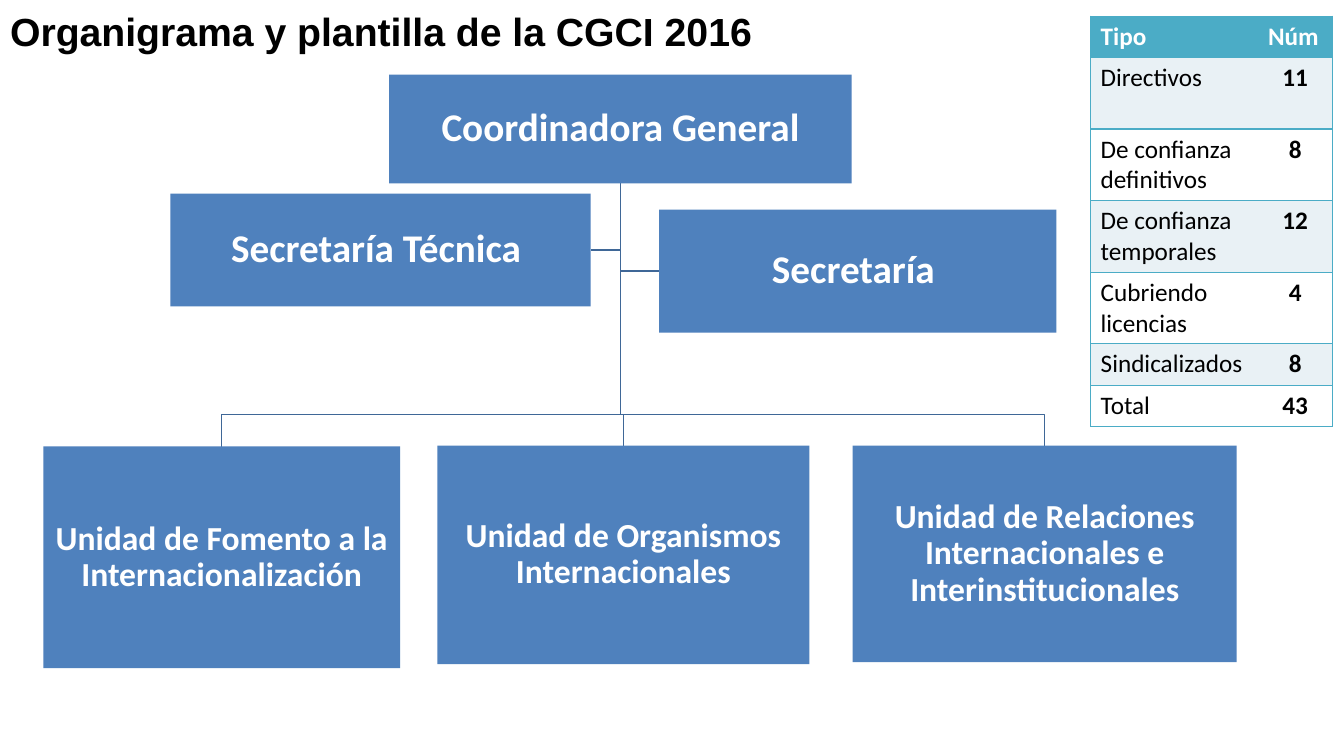
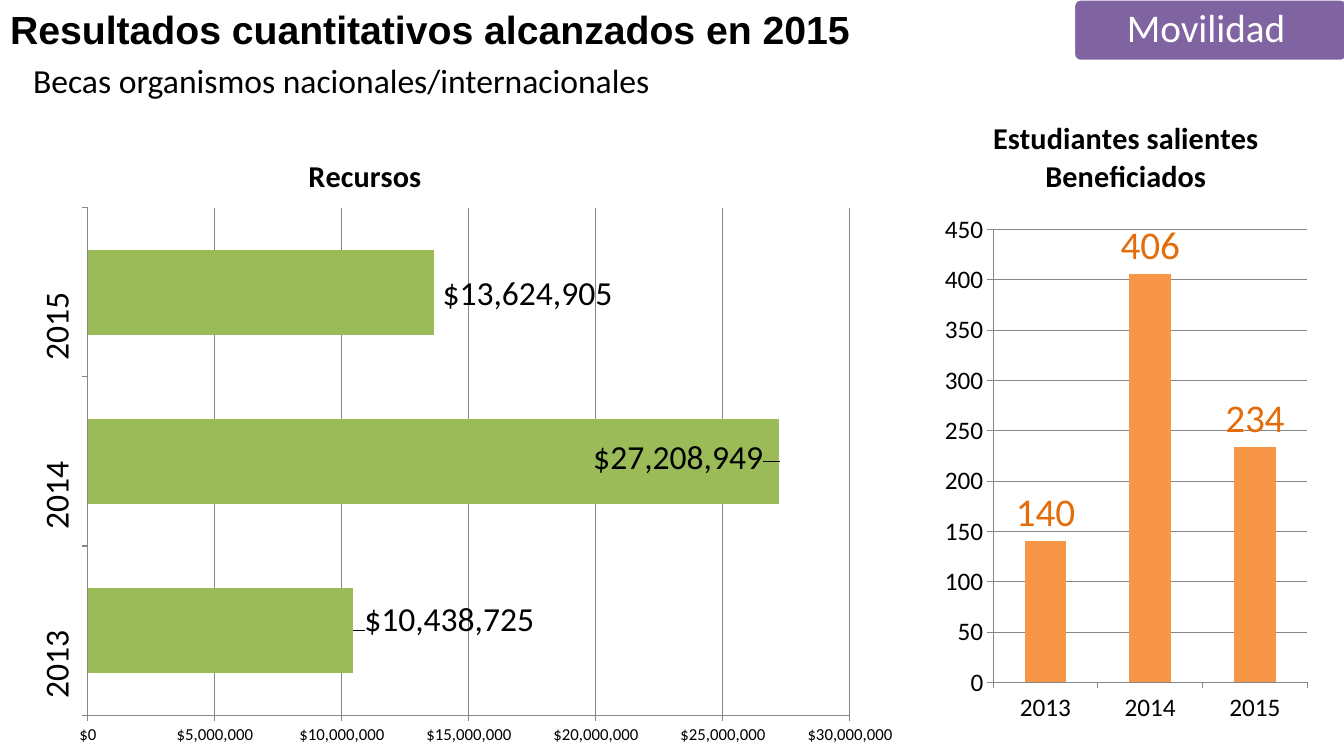
from pptx import Presentation
from pptx.chart.data import CategoryChartData as ChartData
from pptx.dml.color import RGBColor as RGB
from pptx.enum.chart import XL_CHART_TYPE as Kind, XL_LABEL_POSITION as Pos
from pptx.enum.chart import XL_TICK_MARK as Tick
from pptx.enum.shapes import MSO_SHAPE as Shape
from pptx.enum.text import MSO_ANCHOR as Anchor, MSO_AUTO_SIZE as Fit, PP_ALIGN as Align
from pptx.oxml import parse_xml
from pptx.oxml.ns import nsdecls, qn
from pptx.util import Inches, Pt

BLACK = RGB(0x00, 0x00, 0x00)
WHITE = RGB(0xFF, 0xFF, 0xFF)
BLUE = RGB(0x4F, 0x81, 0xBD)
NAVY = RGB(0x3F, 0x67, 0x97)
TEAL = RGB(0x4B, 0xAC, 0xC6)
PALE = RGB(0xE9, 0xF1, 0xF5)
PURPLE = RGB(0x80, 0x64, 0xA2)
GREEN = RGB(0x9B, 0xBB, 0x59)
ORANGE = RGB(0xF7, 0x96, 0x46)
RUST = RGB(0xE4, 0x6C, 0x0A)
GRAY = RGB(0x86, 0x86, 0x86)

# Content of the organisation chart: text, (left, top, width, height)
HEAD = ("Coordinadora General", (3.86, 0.74, 4.59, 1.08))
AIDES = [
    ("Secretaría Técnica ", (1.69, 1.92, 4.17, 1.12)),
    ("Secretaría ", (6.54, 2.08, 3.94, 1.22)),
]
UNITS = [
    ("Unidad de Fomento a la Internacionalización", (0.43, 4.43, 3.54, 2.2)),
    ("Unidad de Organismos Internacionales", (4.34, 4.42, 3.69, 2.17)),
    ("Unidad de Relaciones Internacionales e Interinstitucionales",
     (8.46, 4.42, 3.81, 2.15)),
]
BUS = 4.11

# Staff table: text, number, row height
STAFF = [
    ("Tipo", "Núm", 0.41),
    ("Directivos", "11", 0.71),
    ("De confianza definitivos", "8", 0.71),
    ("De confianza temporales", "12", 0.71),
    ("Cubriendo licencias", "4", 0.71),
    ("Sindicalizados", "8", 0.41),
    ("Total", "43", 0.41),
]
COLS = (1.66, 0.74)

# Charts; spot, plot and shifts are fractions of the chart
YEARS = ("2013", "2014", "2015")
FUNDS = dict(
    kind=Kind.BAR_CLUSTERED, at=(0, 1.37, 9, 6.13), title="Recursos",
    spot=(0.334, 0.018), plot=(0.097, 0.113, 0.84, 0.821),
    vals=(10438725, 27208949, 13624905), fmt='"$"#,##0', top=30000000,
    step=5000000, gap=100, fill=GREEN, sizes=(24, 12, 24), ink=BLACK)
PUPILS = dict(
    kind=Kind.COLUMN_CLUSTERED, at=(9.3, 0.96, 3.74, 6.33),
    title="Estudiantes salientes Beneficiados",
    spot=(0.133, 0.023), plot=(0.148, 0.208, 0.833, 0.71),
    vals=(140, 406, 234), fmt="General", top=450,
    step=50, gap=150, fill=ORANGE, sizes=(18, 18, 28), ink=RUST)
SHIFTS = [
    (Pos.OUTSIDE_END, (0.008, -0.016)),
    (Pos.INSIDE_END, (-0.013, -0.005)),
    (Pos.OUTSIDE_END, (0.005, 0.003)),
]


def inch(nums):
    return [Inches(n) for n in nums]


def style(frame, size, color, bold=False, font="Calibri", align=Align.LEFT):
    for para in frame.paragraphs:
        para.alignment = align
        for run in para.runs:
            run.font.name, run.font.size = font, Pt(size)
            run.font.bold, run.font.color.rgb = bold, color


def new_slide(deck, title, top, width):
    slide = deck.slides.add_slide(deck.slide_layouts[5])
    head = slide.shapes.title
    head.left, head.top, head.width, head.height = inch((0, top, width, 0.57))
    frame = head.text_frame
    frame.text = title
    frame.auto_size, frame.word_wrap = Fit.NONE, False
    frame.vertical_anchor = Anchor.TOP
    style(frame, 28, BLACK, True, "Arial")
    return slide


def add_box(slide, text, at, size, fill, bold=True, kind=Shape.RECTANGLE):
    box = slide.shapes.add_shape(kind, *inch(at))
    box.shadow.inherit = False
    box.fill.solid()
    box.fill.fore_color.rgb = fill
    box.line.fill.background()
    frame = box.text_frame
    frame.text = text
    frame.word_wrap = True
    frame.vertical_anchor = Anchor.MIDDLE
    frame.margin_left = frame.margin_right = Inches(0.02)
    frame.margin_top = frame.margin_bottom = Inches(0.02)
    frame.paragraphs[0].line_spacing = 0.9
    style(frame, size, WHITE, bold, align=Align.CENTER)
    return box


def add_elbow(slide, *points):
    first, *rest = [inch(point) for point in points]
    pen = slide.shapes.build_freeform(*first)
    pen.add_line_segments(rest, close=False)
    elbow = pen.convert_to_shape()
    elbow.shadow.inherit = False
    elbow.fill.background()
    elbow.line.color.rgb, elbow.line.width = NAVY, Pt(1)


def add_tree(slide):
    left, top, width, height = HEAD[1]
    trunk, base = left + width / 2, top + height

    # Lines, each from the foot of the head box
    for _, (x, y, w, h) in AIDES:
        edge, mid = x if x > trunk else x + w, y + h / 2
        add_elbow(slide, (trunk, base), (trunk, mid), (edge, mid))
    for _, (x, y, w, _) in UNITS:
        mid = x + w / 2
        add_elbow(slide, (trunk, base), (trunk, BUS), (mid, BUS), (mid, y))

    # Boxes
    for text, at in [HEAD, *AIDES]:
        add_box(slide, text, at, 28, BLUE)
    for text, at in UNITS:
        add_box(slide, text, at, 24, BLUE)


def add_edges(cell, col):
    outer = "L" if col == 0 else "R"
    props = cell._tc.get_or_add_tcPr()
    for side in "LRTB":
        if side in (outer, "T", "B"):
            paint = f'<a:solidFill><a:srgbClr val="{TEAL}"/></a:solidFill>'
        else:
            paint = "<a:noFill/>"
        props.append(parse_xml(
            f'<a:ln{side} {nsdecls("a")} w="12700">{paint}</a:ln{side}>'))


def add_staff(slide):
    high = sum(row[2] for row in STAFF)
    at = inch((10.82, 0.16, sum(COLS), high))
    table = slide.shapes.add_table(len(STAFF), len(COLS), *at).table
    table.horz_banding = False
    for col, width in zip(table.columns, COLS):
        col.width = Inches(width)
    for r, (name, count, height) in enumerate(STAFF):
        table.rows[r].height = Inches(height)
        for c, text in enumerate((name, count)):
            cell = table.cell(r, c)
            cell.text = text
            add_edges(cell, c)
            cell.fill.solid()
            cell.fill.fore_color.rgb = TEAL if r == 0 else PALE if r % 2 else WHITE
            style(cell.text_frame, 18, BLACK if r else WHITE, r == 0 or c == 1,
                  align=Align.CENTER if r and c else Align.LEFT)


def place(part, nums, after=None, modes=""):
    """Set a manual layout, in fractions of the chart."""
    for old in part.findall(qn("c:layout")):
        part.remove(old)
    tags = modes + "".join(
        f'<c:{k} val="{n}"/>' for k, n in zip("xywh", nums))
    layout = parse_xml(f'<c:layout {nsdecls("c")}><c:manualLayout>{tags}'
                       '</c:manualLayout></c:layout>')
    if after:
        part.find(qn(after)).addnext(layout)
    else:
        part.insert(0, layout)


def add_graph(slide, kind, at, title, spot, plot, vals, fmt, top, step, gap,
              fill, sizes, ink):
    data = ChartData(number_format=fmt)
    data.categories = YEARS
    data.add_series(title, vals)
    chart = slide.shapes.add_chart(kind, *inch(at), data).chart
    chart.font.name, chart.font.size = "Calibri", Pt(18)
    chart.font.color.rgb = BLACK
    chart.has_legend = False

    # Title and plot area
    chart.has_title = True
    frame = chart.chart_title.text_frame
    frame.text = title
    style(frame, 21.6, BLACK, True, align=Align.CENTER)
    edge = '<c:xMode val="edge"/><c:yMode val="edge"/>'
    place(chart.chart_title._element, spot, "c:tx", edge)
    place(chart._chartSpace.chart.plotArea, plot,
          modes='<c:layoutTarget val="inner"/>' + edge)

    # Axes
    cats, nums = chart.category_axis, chart.value_axis
    nums.minimum_scale, nums.maximum_scale = 0, top
    nums.major_unit = step
    nums.major_gridlines.format.line.color.rgb = GRAY
    nums.tick_labels.number_format = fmt
    nums.tick_labels.number_format_is_linked = False
    for axis, size in zip((cats, nums), sizes):
        axis.major_tick_mark = Tick.OUTSIDE
        axis.format.line.color.rgb = GRAY
        axis.tick_labels.font.size = Pt(size)
    if kind == Kind.BAR_CLUSTERED:
        body = cats._element.find(qn("c:txPr")).find(qn("a:bodyPr"))
        body.set("rot", "-5400000")
        body.set("vert", "horz")

    # Bars and labels
    bars = chart.plots[0]
    bars.gap_width, bars.vary_by_categories = gap, False
    series = bars.series[0]
    series.format.fill.solid()
    series.format.fill.fore_color.rgb = fill
    labels = series.data_labels
    labels.show_value, labels.position = True, Pos.OUTSIDE_END
    labels.font.size, labels.font.color.rgb = Pt(sizes[2]), ink
    return series


def main():
    deck = Presentation()
    deck.slide_width, deck.slide_height = Inches(40) // 3, Inches(7.5)

    # Organisation chart and staff
    slide = new_slide(deck, "Organigrama y plantilla de la CGCI 2016", 0.02, 7.65)
    add_staff(slide)
    add_tree(slide)

    # Results
    slide = new_slide(deck, "Resultados cuantitativos alcanzados en 2015", 0, 8.63)
    tag = add_box(slide, "Movilidad ", (10.66, 0, 2.7, 0.6), 28, PURPLE, False,
                  Shape.ROUNDED_RECTANGLE)
    tag.adjustments[0] = 0.1
    tag.line.color.rgb, tag.line.width = WHITE, Pt(1)
    note = slide.shapes.add_textbox(*inch((0.23, 0.55, 6.9, 0.5))).text_frame
    note.word_wrap = True
    note.text = "Becas organismos nacionales/internacionales"
    style(note, 24, BLACK)

    # Money labels sit a little off their bars
    funds = add_graph(slide, **FUNDS)
    for i, (pos, shift) in enumerate(SHIFTS):
        label = funds.points[i].data_label
        label.font.size, label.font.color.rgb = Pt(24), BLACK
        label.position = pos
        place(funds.data_labels._element.findall(qn("c:dLbl"))[i], shift, "c:idx")
    add_graph(slide, **PUPILS)

    deck.save("out.pptx")


if __name__ == "__main__":
    main()
